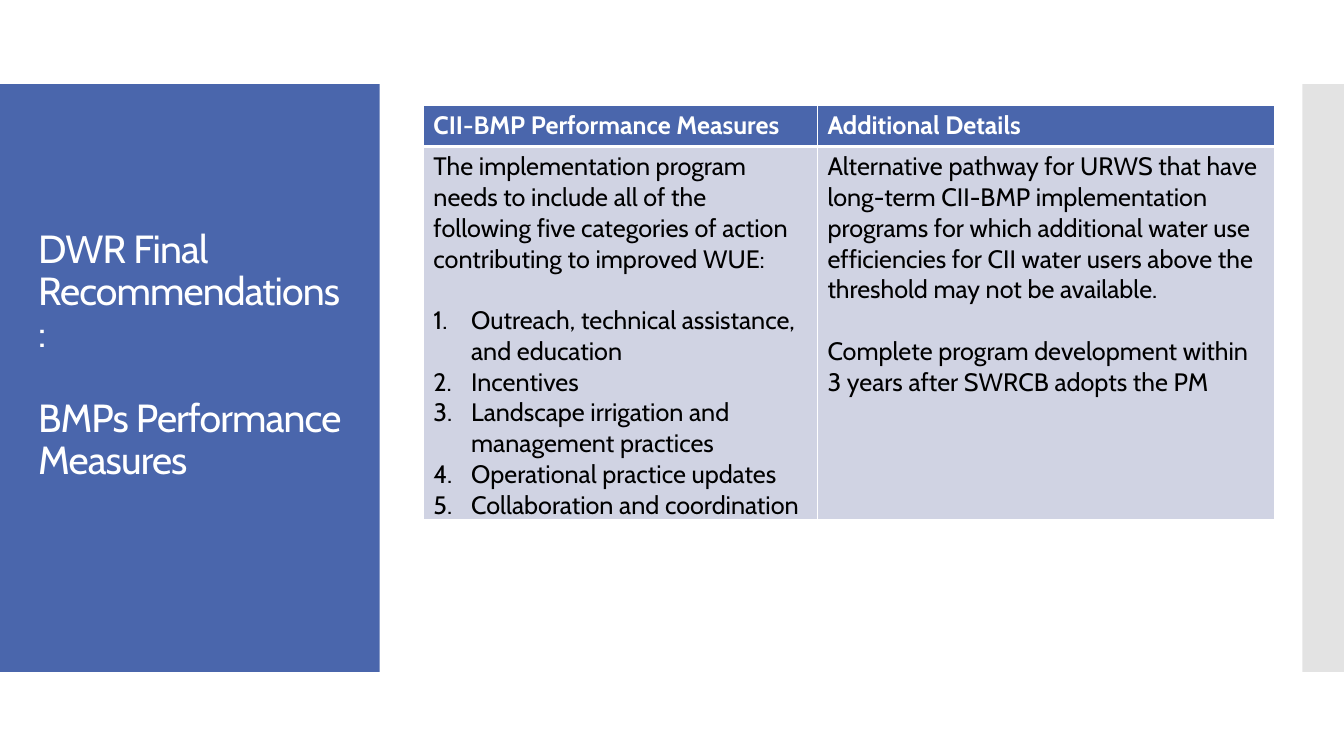
from dataclasses import dataclass

from lxml import etree
from pptx import Presentation
from pptx.dml.color import RGBColor
from pptx.enum.shapes import MSO_SHAPE
from pptx.enum.text import MSO_ANCHOR, PP_ALIGN
from pptx.oxml.ns import qn
from pptx.util import Cm, Pt

RECTANGLE = MSO_SHAPE.RECTANGLE
MIDDLE = MSO_ANCHOR.MIDDLE
LEFT = PP_ALIGN.LEFT

BLUE = RGBColor(0x4A, 0x66, 0xAC)
GREY = RGBColor(0xC8, 0xC8, 0xC8)
LAVENDER = RGBColor(0xD0, 0xD3, 0xE3)
WHITE = RGBColor(0xFF, 0xFF, 0xFF)
BLACK = RGBColor(0x00, 0x00, 0x00)

FONT = "Cabin"
TITLE_SIZE = 28
TABLE_SIZE = 18
TITLE_GAP = 30
TABLE_GAP = 22
LIST_INDENT = Cm(0.95)
BAND_TOP, BAND_HEIGHT = 2.12, 14.81


@dataclass
class Band:
    left: float
    width: float
    color: RGBColor
    opacity: int = 100


@dataclass
class Line:
    text: str
    gap_before: float = 0
    numbered: bool = False


@dataclass
class Column:
    width: float
    heading: str
    details: list[Line]


BANDS = [Band(0, 9.57, BLUE), Band(32.82, 1.05, GREY, 50)]

TITLE = [
    Line("DWR Final"),
    Line("Recommendations:"),
    Line("BMPs Performance Measures", TITLE_GAP),
]

COLUMNS = [
    Column(9.93, "CII-BMP Performance Measures", [
        Line("The implementation program needs to include all of the following "
             "five categories of action contributing to improved WUE:"),
        Line("Outreach, technical assistance, and education", TABLE_GAP, True),
        Line("Incentives", numbered=True),
        Line("Landscape irrigation and management practices", numbered=True),
        Line("Operational practice updates", numbered=True),
        Line("Collaboration and coordination", numbered=True),
    ]),
    Column(11.51, "Additional Details", [
        Line("Alternative pathway for URWS that have long-term CII-BMP "
             "implementation programs for which additional water use efficiencies "
             "for CII water users above the threshold may not be available."),
        Line("Complete program development within 3 years after SWRCB adopts the PM",
             TABLE_GAP),
    ]),
]
ROW_HEIGHTS = [1.04, 9.4]


def add_band(slide, band: Band) -> None:
    shape = slide.shapes.add_shape(
        RECTANGLE, Cm(band.left), Cm(BAND_TOP), Cm(band.width), Cm(BAND_HEIGHT))
    shape.shadow.inherit = False
    shape.line.fill.background()
    shape.fill.solid()
    shape.fill.fore_color.rgb = band.color
    if band.opacity < 100:
        color = shape.fill._xPr.find(f".//{qn('a:srgbClr')}")
        etree.SubElement(color, qn("a:alpha"), val=str(band.opacity * 1000))


def write_lines(frame, lines: list[Line], size: float, color: RGBColor,
                bold: bool = False, line_spacing: float = 1.0,
                tracking: int = 0) -> None:
    for index, line in enumerate(lines):
        paragraph = frame.add_paragraph() if index else frame.paragraphs[0]
        paragraph.alignment = LEFT
        paragraph.line_spacing = line_spacing
        paragraph.space_before = Pt(line.gap_before)
        if line.numbered:
            properties = paragraph._p.get_or_add_pPr()
            properties.set("marL", str(LIST_INDENT))
            properties.set("indent", str(-LIST_INDENT))
            etree.SubElement(properties, qn("a:buAutoNum"), type="arabicPeriod")
        run = paragraph.add_run()
        run.text = line.text
        run.font.name = FONT
        run.font.size = Pt(size)
        run.font.bold = bold
        run.font.color.rgb = color
        if tracking:
            run.font._element.set("spc", str(tracking))


def style_cell(cell, fill: RGBColor, borders: dict[str, float]) -> None:
    properties = cell._tc.get_or_add_tcPr()
    for side, width in borders.items():
        border = etree.SubElement(properties, qn(f"a:ln{side}"), w=str(Pt(width)))
        solid = etree.SubElement(border, qn("a:solidFill"))
        etree.SubElement(solid, qn("a:srgbClr"), val=str(WHITE))
    cell.fill.solid()
    cell.fill.fore_color.rgb = fill


def add_title(slide) -> None:
    box = slide.shapes.add_textbox(Cm(0.71), Cm(3.12), Cm(8.18), Cm(12.78))
    frame = box.text_frame
    frame.word_wrap = True
    frame.vertical_anchor = MIDDLE
    # Raise the centred title by half a line
    frame.margin_bottom = Cm(1.2)
    write_lines(frame, TITLE, TITLE_SIZE, WHITE, line_spacing=0.9, tracking=-60)


def add_measures_table(slide) -> None:
    table = slide.shapes.add_table(
        len(ROW_HEIGHTS), len(COLUMNS), Cm(10.67), Cm(2.65),
        Cm(sum(column.width for column in COLUMNS)), Cm(sum(ROW_HEIGHTS))).table
    table.horz_banding = False
    for row, height in zip(table.rows, ROW_HEIGHTS):
        row.height = Cm(height)
    for index, column in enumerate(COLUMNS):
        table.columns[index].width = Cm(column.width)
        heading, details = table.cell(0, index), table.cell(1, index)
        style_cell(heading, BLUE, {"L": 1, "R": 1, "T": 1, "B": 3})
        style_cell(details, LAVENDER, {"L": 1, "R": 1, "T": 3, "B": 1})
        write_lines(heading.text_frame, [Line(column.heading)], TABLE_SIZE, WHITE, True)
        write_lines(details.text_frame, column.details, TABLE_SIZE, BLACK)


def main() -> None:
    presentation = Presentation()
    presentation.slide_width = Cm(33.87)
    presentation.slide_height = Cm(19.05)
    slide = presentation.slides.add_slide(presentation.slide_layouts[6])

    # Side bands
    for band in BANDS:
        add_band(slide, band)

    # Title and table
    add_title(slide)
    add_measures_table(slide)

    presentation.save("out.pptx")


if __name__ == "__main__":
    main()
